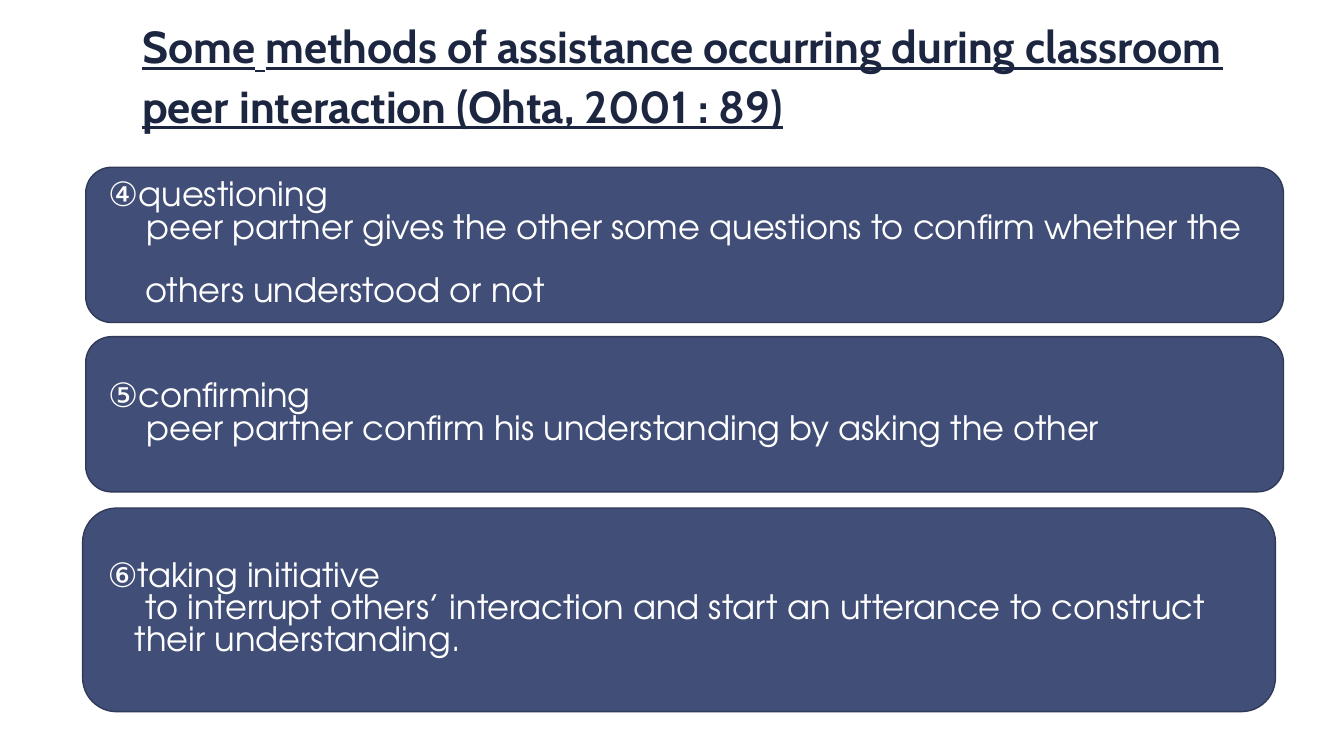
from pptx import Presentation
from pptx.dml.color import RGBColor
from pptx.enum.shapes import MSO_SHAPE
from pptx.enum.text import MSO_ANCHOR, PP_ALIGN
from pptx.util import Inches, Pt

WHITE = RGBColor(0xFF, 0xFF, 0xFF)
INK = RGBColor(0x1C, 0x26, 0x40)
CARD_FILL = RGBColor(0x41, 0x4E, 0x77)
CARD_LINE = RGBColor(0x30, 0x3A, 0x58)

TITLE_FONT = "Cabin"
SPACE_FONT = "Noto Sans CJK JP"
BODY_FONT = "TeX Gyre Adventor"

TITLE = [
    ("Some", TITLE_FONT),
    (" ", SPACE_FONT),
    ("methods of assistance occurring during classroom "
     "peer interaction (Ohta, 2001 : 89)", TITLE_FONT),
]

# Each card: left, top, width, height, lines of (text, indent, points before)
CARDS = [
    (0.85, 1.66, 11.88, 1.54, [
        ("④questioning", 0.05, 0),
        ("peer partner gives the other some questions to confirm whether the", 0.43, 0),
        ("others understood or not", 0.42, 22),
    ]),
    (0.85, 3.34, 11.88, 1.54, [
        ("⑤confirming", 0.05, 0),
        ("peer partner confirm his understanding by asking the other", 0.43, 0),
    ]),
    (0.82, 5.04, 11.83, 2.02, [
        ("⑥taking initiative", 0.05, 0),
        ("to interrupt others’ interaction and start an utterance to construct", 0.43, 0),
        ("their understanding.", 0.32, 0),
    ]),
]


class MethodsSlide:
    def __init__(self, deck):
        self.page = deck.slides.add_slide(deck.slide_layouts[6])
        self.page.background.fill.solid()
        self.page.background.fill.fore_color.rgb = WHITE

    def add_span(self, para, text, font, size, color):
        span = para.add_run()
        span.text = text
        span.font.name = font
        span.font.size = Pt(size)
        span.font.color.rgb = color
        return span

    def add_title(self, spans, left, top, width, height):
        box = self.page.shapes.add_textbox(
            Inches(left), Inches(top), Inches(width), Inches(height))
        frame = box.text_frame
        frame.word_wrap = True
        frame.vertical_anchor = MSO_ANCHOR.BOTTOM
        frame.margin_left = frame.margin_right = Inches(0.13)
        frame.margin_top = frame.margin_bottom = Inches(0.07)
        para = frame.paragraphs[0]
        para.line_spacing = 1.1
        for text, font in spans:
            span = self.add_span(para, text, font, 32, INK)
            span.font.bold = True
            span.font.underline = True

    def add_card(self, left, top, width, height, lines):
        card = self.page.shapes.add_shape(
            MSO_SHAPE.ROUNDED_RECTANGLE,
            Inches(left), Inches(top), Inches(width), Inches(height))
        card.shadow.inherit = False
        card.fill.solid()
        card.fill.fore_color.rgb = CARD_FILL
        card.line.color.rgb = CARD_LINE
        card.line.width = Pt(1)
        frame = card.text_frame
        frame.word_wrap = True
        frame.vertical_anchor = MSO_ANCHOR.MIDDLE
        for number, (text, indent, before) in enumerate(lines):
            para = frame.add_paragraph() if number else frame.paragraphs[0]
            para.alignment = PP_ALIGN.LEFT
            para.line_spacing = 0.8
            if before:
                para.space_before = Pt(before)
            properties = para._p.get_or_add_pPr()
            properties.set("marL", str(Inches(indent)))
            properties.set("indent", "0")
            self.add_span(para, text, BODY_FONT, 24, WHITE)


def main():
    deck = Presentation()
    deck.slide_width = Inches(13.33)
    deck.slide_height = Inches(7.5)
    slide = MethodsSlide(deck)
    slide.add_title(TITLE, 1.28, 0.36, 11.11, 1.02)
    for card in CARDS:
        slide.add_card(*card)
    deck.save("out.pptx")


if __name__ == "__main__":
    main()
